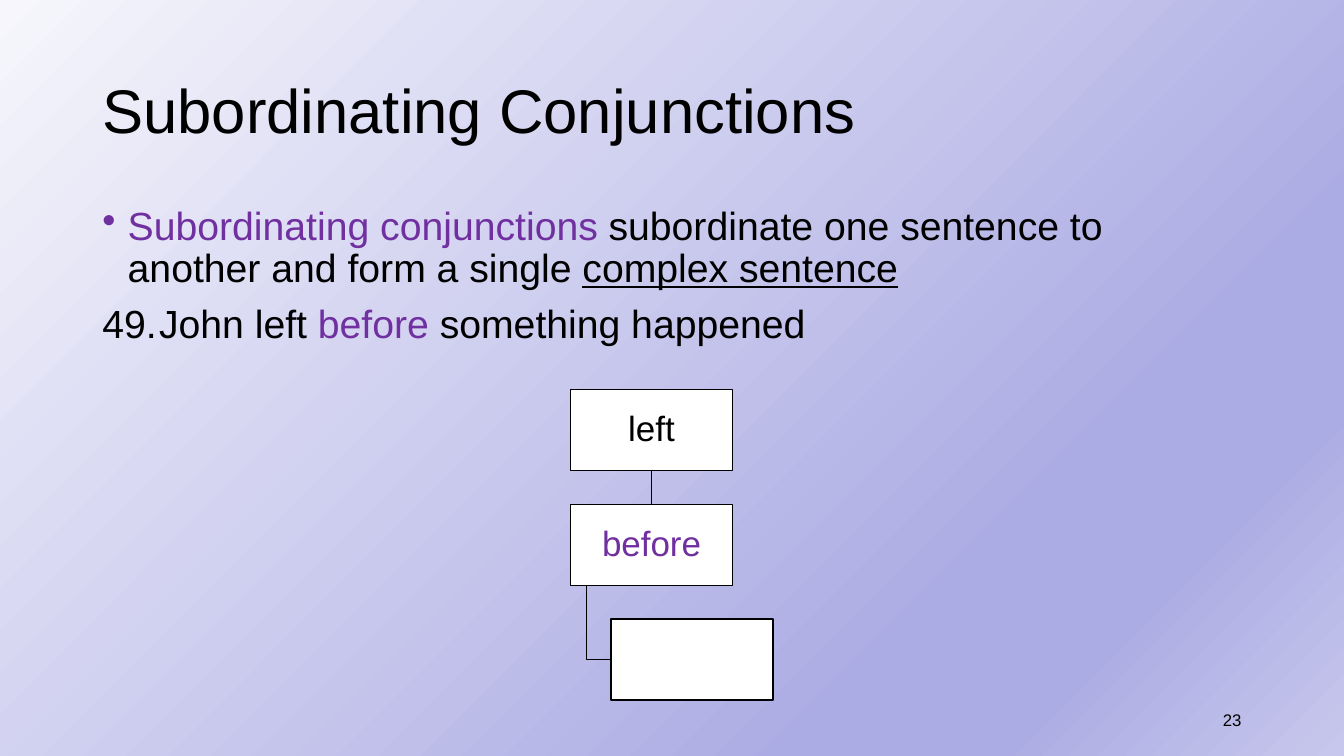
from lxml.etree import SubElement
from pptx import Presentation
from pptx.dml.color import RGBColor
from pptx.enum.shapes import MSO_CONNECTOR, MSO_SHAPE
from pptx.enum.text import MSO_ANCHOR, PP_ALIGN
from pptx.oxml.ns import qn
from pptx.util import Cm, Pt

BLACK = RGBColor(0, 0, 0)
WHITE = RGBColor(255, 255, 255)
PURPLE = RGBColor(0x70, 0x30, 0xA0)
STOPS = [
    (0, RGBColor(0xF6, 0xF6, 0xFC)),
    (74, RGBColor(0xAC, 0xAC, 0xE4)),
    (83, RGBColor(0xAC, 0xAC, 0xE4)),
    (100, RGBColor(0xC7, 0xC7, 0xED)),
]


def paint_back(slide):
    fill = slide.background.fill
    fill.gradient()
    fill.gradient_angle = 315
    stops = slide.element.find(".//" + qn("a:gsLst"))
    for stop in list(stops):
        stops.remove(stop)
    for place, color in STOPS:
        stop = SubElement(stops, qn("a:gs"), pos=str(place * 1000))
        SubElement(stop, qn("a:srgbClr"), val=str(color))


def set_font(par, size, color=BLACK):
    par.font.name = "Arial"
    par.font.size = Pt(size)
    par.font.color.rgb = color


def add_frame(slide, box, anchor=MSO_ANCHOR.MIDDLE):
    frame = slide.shapes.add_textbox(*box).text_frame
    frame.word_wrap = True
    frame.vertical_anchor = anchor
    return frame


def add_line(slide, box, text, size, align=PP_ALIGN.LEFT):
    par = add_frame(slide, box).paragraphs[0]
    par.text = text
    par.alignment = align
    par.line_spacing = 0.9
    set_font(par, size)


def add_item(par, runs, indent, tag, **mark):
    par.line_spacing = 0.9
    par.space_before = Pt(10)
    set_font(par, 28)
    props = par._p.get_or_add_pPr()
    props.set("marL", str(indent))
    props.set("indent", str(-indent))
    bullet = props.makeelement(qn(tag), mark)
    props.find(qn("a:defRPr")).addprevious(bullet)
    for text, color, under in runs:
        run = par.add_run()
        run.text = text
        run.font.name = "Arial"
        run.font.size = Pt(28)
        run.font.color.rgb = color
        if under:
            run.font.underline = True


def add_body(slide, box):
    frame = add_frame(slide, box, MSO_ANCHOR.TOP)
    add_item(frame.paragraphs[0], [
        ("Subordinating conjunctions", PURPLE, False),
        (" subordinate one sentence to another and form a single ", BLACK, False),
        ("complex sentence", BLACK, True),
    ], Cm(0.64), "a:buChar", char="•")
    add_item(frame.add_paragraph(), [
        ("John left ", BLACK, False),
        ("before", PURPLE, False),
        (" something happened", BLACK, False),
    ], Cm(1.43), "a:buAutoNum", type="arabicPeriod", startAt="49")


def style_line(shape):
    shape.line.color.rgb = BLACK
    shape.line.width = Pt(1)


def add_node(slide, box, text, color):
    node = slide.shapes.add_shape(MSO_SHAPE.RECTANGLE, *box)
    node.shadow.inherit = False
    node.fill.solid()
    node.fill.fore_color.rgb = WHITE
    style_line(node)
    if text:
        frame = node.text_frame
        frame.margin_left = frame.margin_right = Cm(0.05)
        frame.margin_top = frame.margin_bottom = Cm(0.05)
        par = frame.paragraphs[0]
        par.text = text
        par.alignment = PP_ALIGN.CENTER
        par.line_spacing = 0.9
        set_font(par, 25, color)


def add_tree(slide, left, top, wide, high):
    step = high + Cm(0.85)
    shift = wide // 4
    stem = left + wide // 10
    mid = left + wide // 2

    link = slide.shapes.add_connector(
        MSO_CONNECTOR.STRAIGHT, mid, top + high, mid, top + step)
    style_line(link)
    SubElement(link._element.spPr, qn("a:effectLst"))

    turn = top + 2 * step + high // 2
    path = slide.shapes.build_freeform(stem, top + step + high)
    path.add_line_segments([(stem, turn), (left + shift, turn)], close=False)
    elbow = path.convert_to_shape()
    elbow.shadow.inherit = False
    elbow.fill.background()
    style_line(elbow)

    nodes = [("left", BLACK, 0), ("before", PURPLE, 0), ("", BLACK, shift)]
    for row, (text, color, move) in enumerate(nodes):
        add_node(slide, (left + move, top + row * step, wide, high), text, color)


def main():
    deck = Presentation()
    deck.slide_width = Cm(33.87)
    deck.slide_height = Cm(19.05)
    slide = deck.slides.add_slide(deck.slide_layouts[6])
    paint_back(slide)
    add_line(slide, (Cm(2.33), Cm(1.01), Cm(29.21), Cm(3.68)),
             "Subordinating Conjunctions", 44)
    add_body(slide, (Cm(2.33), Cm(5.07), Cm(29.21), Cm(12.09)))
    add_line(slide, (Cm(23.92), Cm(17.66), Cm(7.62), Cm(1.01)),
             "23", 12, PP_ALIGN.RIGHT)
    add_tree(slide, Cm(14.38), Cm(9.82), Cm(4.08), Cm(2.04))
    deck.save("out.pptx")


if __name__ == "__main__":
    main()
